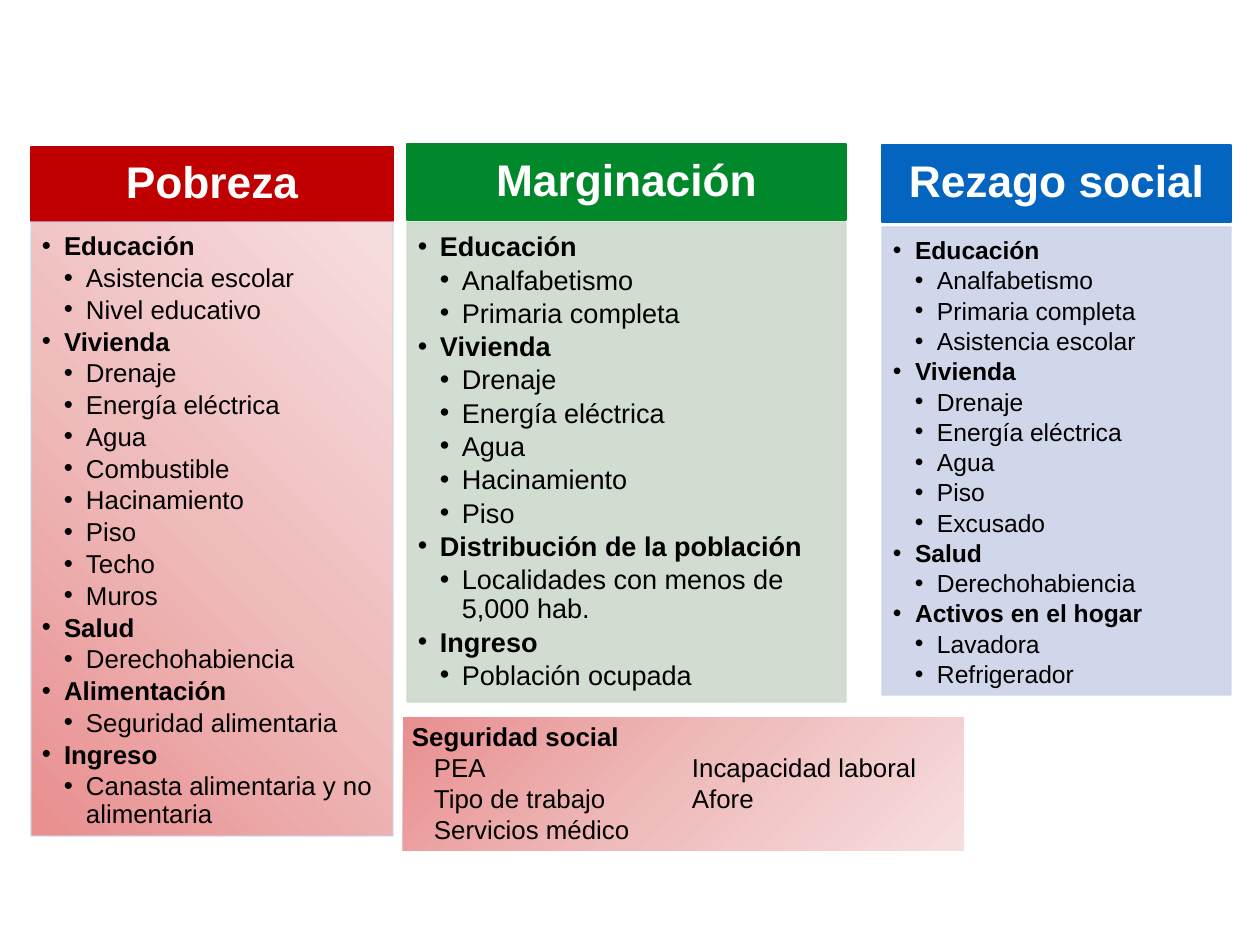
import pptx
import pptx.util
import pptx.dml.color
import pptx.enum.shapes
import pptx.enum.text
import pptx.oxml
import pptx.oxml.ns

SLIDE_SIZE = (1260, 945)
PX = 10320
FONT = "Arial"
COLORS = {
    "red": "C00000", "green": "00882B", "blue": "0365C0",
    "pale_green": "CCDACD", "pale_blue": "CCD3E8",
    "white": "FFFFFF", "black": "000000",
}
PINK_STOPS = [(0, "E98F8F"), (50, "EFBCBC"), (100, "F7DEDE")]
FROM_BOTTOM_LEFT = '<a:path path="circle"><a:fillToRect t="100000" r="100000"/></a:path>'
DIAGONAL = '<a:lin ang="2700000" scaled="0"/>'

COLUMNS = [
    {
        "heading": "Pobreza", "color": "red", "body_fill": None, "body_line": "pale_blue",
        "left": 31, "width": 362, "heading_span": (147, 74), "body_span": (222, 614),
        "size": 21,
        "topics": [
            ("Educación", ["Asistencia escolar", "Nivel educativo"]),
            ("Vivienda", ["Drenaje", "Energía eléctrica", "Agua", "Combustible",
                          "Hacinamiento", "Piso", "Techo", "Muros"]),
            ("Salud", ["Derechohabiencia"]),
            ("Alimentación", ["Seguridad alimentaria"]),
            ("Ingreso", ["Canasta alimentaria y no alimentaria"]),
        ],
    },
    {
        "heading": "Marginación", "color": "green", "body_fill": "pale_green", "body_line": "pale_green",
        "left": 407, "width": 439, "heading_span": (144, 76), "body_span": (222, 480),
        "size": 22,
        "topics": [
            ("Educación", ["Analfabetismo", "Primaria completa"]),
            ("Vivienda", ["Drenaje", "Energía eléctrica", "Agua", "Hacinamiento", "Piso"]),
            ("Distribución de la población", ["Localidades con menos de 5,000 hab."]),
            ("Ingreso", ["Población ocupada"]),
        ],
    },
    {
        "heading": "Rezago social", "color": "blue", "body_fill": "pale_blue", "body_line": "pale_blue",
        "left": 882, "width": 349, "heading_span": (145, 77), "body_span": (227, 468),
        "size": 20,
        "topics": [
            ("Educación", ["Analfabetismo", "Primaria completa", "Asistencia escolar"]),
            ("Vivienda", ["Drenaje", "Energía eléctrica", "Agua", "Piso", "Excusado"]),
            ("Salud", ["Derechohabiencia"]),
            ("Activos en el hogar", ["Lavadora", "Refrigerador"]),
        ],
    },
]
SECURITY_BOX = (403, 717, 561, 134)
SECURITY_SIZE = 21
SECURITY_TABS = (22, 280)
SECURITY_LINES = [
    "Seguridad social",
    "\tPEA\tIncapacidad laboral",
    "\tTipo de trabajo\tAfore",
    "\tServicios médico",
]
HEADING_INSETS = (25, 14, 25, 14)
BODY_INSETS = (11, 11, 14, 16)
SECURITY_INSETS = (9, 4, 9, 4)
INDENT = 22


def rgb(color):
    return pptx.dml.color.RGBColor.from_string(COLORS[color])


def xml(tag, content="", attributes=""):
    return pptx.oxml.parse_xml(
        f'<a:{tag} {pptx.oxml.ns.nsdecls("a")} {attributes}>{content}</a:{tag}>')


def make_translucent(fill_parent):
    fill_parent.find(".//" + pptx.oxml.ns.qn("a:srgbClr")).append(xml("alpha", attributes='val="90000"'))


def fill_pink(panel, direction):
    stops = "".join(f'<a:gs pos="{at * 1000}"><a:srgbClr val="{color}"/></a:gs>'
                    for at, color in PINK_STOPS)
    geometry = panel.element.spPr.find(pptx.oxml.ns.qn("a:prstGeom"))
    geometry.addnext(xml("gradFill", f"<a:gsLst>{stops}</a:gsLst>{direction}", 'rotWithShape="1"'))


def add_panel(slide, box, insets, fill=None, line=None):
    panel = slide.shapes.add_shape(
        pptx.enum.shapes.MSO_SHAPE.RECTANGLE, *(length * PX for length in box))
    panel.shadow.inherit = False
    if fill:
        panel.fill.solid()
        panel.fill.fore_color.rgb = rgb(fill)
    if line:
        panel.line.color.rgb = rgb(line)
        panel.line.width = pptx.util.Pt(1)
    else:
        panel.line.fill.background()
    frame = panel.text_frame
    frame.word_wrap = True
    frame.vertical_anchor = pptx.enum.text.MSO_ANCHOR.TOP
    frame.margin_left, frame.margin_top, frame.margin_right, frame.margin_bottom = (
        inset * PX for inset in insets)
    return panel


def next_paragraph(frame):
    return frame.add_paragraph() if frame.paragraphs[0].runs else frame.paragraphs[0]


def write(paragraph, text, size, bold, color="black", align=pptx.enum.text.PP_ALIGN.LEFT):
    paragraph.add_run().text = text
    paragraph.alignment = align
    paragraph.font.name = FONT
    paragraph.font.size = pptx.util.Pt(size)
    paragraph.font.bold = bold
    paragraph.font.color.rgb = rgb(color)


def add_bullet(frame, text, level, size):
    paragraph = next_paragraph(frame)
    properties = paragraph._p.get_or_add_pPr()
    properties.set("marL", str((level + 1) * INDENT * PX))
    properties.set("indent", str(-INDENT * PX))
    properties.append(xml("buFont", attributes=f'typeface="{FONT}"'))
    properties.append(xml("buChar", attributes='char="•"'))
    paragraph.level = level
    paragraph.line_spacing = pptx.util.Pt(1.08 * size)
    paragraph.space_after = pptx.util.Pt(0.15 * size)
    write(paragraph, text, size, level == 0)


def add_column(slide, column):
    left, width = column["left"], column["width"]
    top, height = column["heading_span"]
    heading = add_panel(slide, (left, top, width, height), HEADING_INSETS,
                        column["color"], column["color"])
    heading.text_frame.vertical_anchor = pptx.enum.text.MSO_ANCHOR.MIDDLE
    title = heading.text_frame.paragraphs[0]
    title.line_spacing = 0.9
    write(title, column["heading"], 36, True, "white", pptx.enum.text.PP_ALIGN.CENTER)

    top, height = column["body_span"]
    body = add_panel(slide, (left, top, width, height), BODY_INSETS,
                     column["body_fill"], column["body_line"])
    if column["body_fill"]:
        make_translucent(body.element.spPr)
    else:
        fill_pink(body, FROM_BOTTOM_LEFT)
    make_translucent(body.line._get_or_add_ln())
    for topic, indicators in column["topics"]:
        add_bullet(body.text_frame, topic, 0, column["size"])
        for indicator in indicators:
            add_bullet(body.text_frame, indicator, 1, column["size"])


def add_security(slide):
    security = add_panel(slide, SECURITY_BOX, SECURITY_INSETS)
    fill_pink(security, DIAGONAL)
    tabs = "".join(f'<a:tab pos="{stop * PX}" algn="l"/>' for stop in SECURITY_TABS)
    for index, line in enumerate(SECURITY_LINES):
        paragraph = next_paragraph(security.text_frame)
        paragraph._p.get_or_add_pPr().append(xml("tabLst", tabs))
        paragraph.line_spacing = pptx.util.Pt(1.2 * SECURITY_SIZE)
        write(paragraph, line, SECURITY_SIZE, index == 0)


def main():
    presentation = pptx.Presentation()
    presentation.slide_width, presentation.slide_height = (length * PX for length in SLIDE_SIZE)
    slide = presentation.slides.add_slide(presentation.slide_layouts[6])
    for column in COLUMNS:
        add_column(slide, column)
    add_security(slide)
    presentation.save("out.pptx")


if __name__ == "__main__":
    main()
